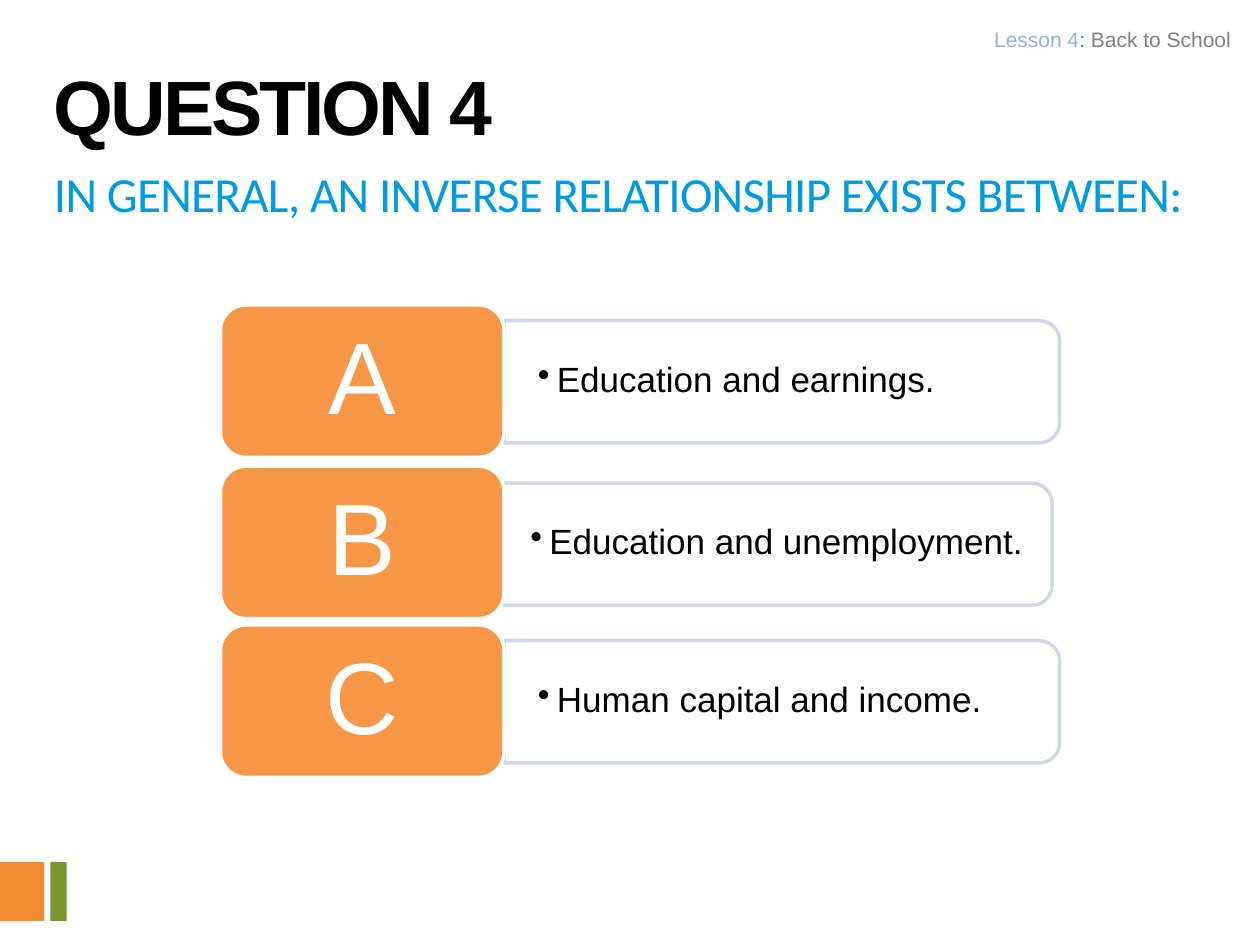
import pptx
import pptx.util
import pptx.dml.color
import pptx.enum.shapes
import pptx.enum.text
import lxml.etree

Inches, Pt = pptx.util.Inches, pptx.util.Pt
Shape = pptx.enum.shapes.MSO_SHAPE
Align = pptx.enum.text.PP_ALIGN
Anchor = pptx.enum.text.MSO_ANCHOR
color = pptx.dml.color.RGBColor.from_string

deck = pptx.Presentation()
deck.slide_width, deck.slide_height = Inches(10), Inches(7.5)
slide = deck.slides.add_slide(deck.slide_layouts[6])


def add_shape(kind, left, top, width, height, fill, line=None):
    shape = slide.shapes.add_shape(kind, *map(Inches, (left, top, width, height)))
    shape.shadow.inherit = False
    shape.fill.solid()
    shape.fill.fore_color.rgb = color(fill)
    if line:
        shape.line.color.rgb = color(line)
        shape.line.width = Pt(2)
    else:
        shape.line.fill.background()
    return shape


def add_text(shape, runs, size, font="Arial", bold=False, track=0, pad=(0.1, 0.05, 0.1, 0.05)):
    frame = shape.text_frame
    frame.word_wrap = True
    frame.margin_left, frame.margin_top, frame.margin_right, frame.margin_bottom = map(Inches, pad)
    para = frame.paragraphs[0]
    for text, tint in runs:
        run = para.add_run()
        run.text = text
        run.font.name, run.font.size, run.font.bold = font, Pt(size), bold
        run.font.color.rgb = color(tint)
        if track:
            run.font._element.set("spc", str(track))
    return para


for left, width, fill in ((0, 0.35, "F38A31"), (0.4, 0.13, "77972B")):
    add_shape(Shape.RECTANGLE, left, 6.84, width, 0.47, fill)

box = slide.shapes.add_textbox(Inches(0.33), Inches(1.25), Inches(9.42), Inches(0.83))
add_text(box, [("IN GENERAL, AN INVERSE RELATIONSHIP EXISTS BETWEEN:", "009AE1")], 28, "Calibri", track=-40)

rows = (
    ("A", "Education and earnings.", 2.42, 4, 3.03, 0.27),
    ("B", "Education and unemployment.", 3.7, 3.94, 4.32, 0),
    ("C", "Human capital and income.", 4.96, 4, 5.57, 0),
)
thick, long = 0.97, 4.41
for letter, answer, top, left, mid, right in rows:
    panel = add_shape(Shape.ROUND_2_SAME_RECTANGLE, left + (long - thick) / 2, mid - long / 2,
                      thick, long, "FFFFFF", "D0D8E8")
    panel.rotation = 90

    box = slide.shapes.add_textbox(Inches(left), Inches(mid - 0.44), Inches(4.37), Inches(0.87))
    para = add_text(box, [(answer, "000000")], 20, pad=(0.27, 0.14, right, 0.14))
    box.text_frame.vertical_anchor = Anchor.MIDDLE
    para.line_spacing = 0.9
    props = para._p.get_or_add_pPr()
    props.set("marL", str(Inches(0.15)))
    props.set("indent", str(Inches(-0.15)))
    bullet = lxml.etree.SubElement(props, pptx.oxml.ns.qn("a:buChar"))
    bullet.set("char", "•")

    tile = add_shape(Shape.ROUNDED_RECTANGLE, 1.75, top, 2.25, 1.21, "F79646", "FFFFFF")
    para = add_text(tile, [(letter, "FFFFFF")], 58, pad=(0.3, 0.18, 0.3, 0.18))
    tile.text_frame.vertical_anchor = Anchor.MIDDLE
    para.alignment = Align.CENTER
    para.line_spacing = 0.9

box = slide.shapes.add_textbox(Inches(4), Inches(0.17), Inches(5.85), Inches(0.32))
para = add_text(box, [("Lesson 4", "8EB4E3"), (": ", "009AE1"), ("Back to School", "808080")],
                12, pad=(0.08, 0.04, 0.08, 0.04))
para.alignment = Align.RIGHT

box = slide.shapes.add_textbox(Inches(0.33), Inches(0.33), Inches(8.66), Inches(0.83))
para = add_text(box, [("QUESTION 4", "000000")], 44, bold=True, track=-180)
para.line_spacing = Pt(59)

deck.save("out.pptx")
